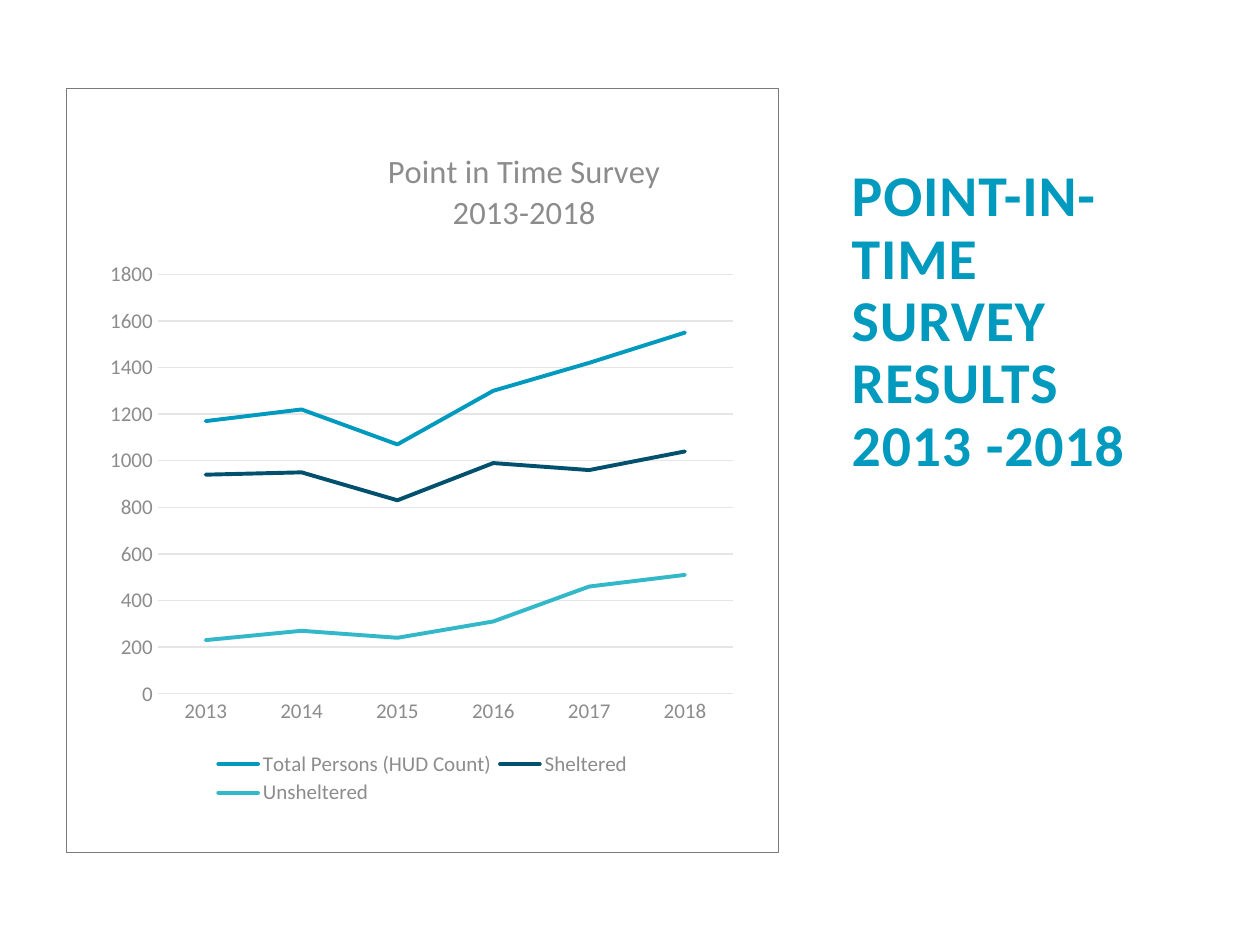
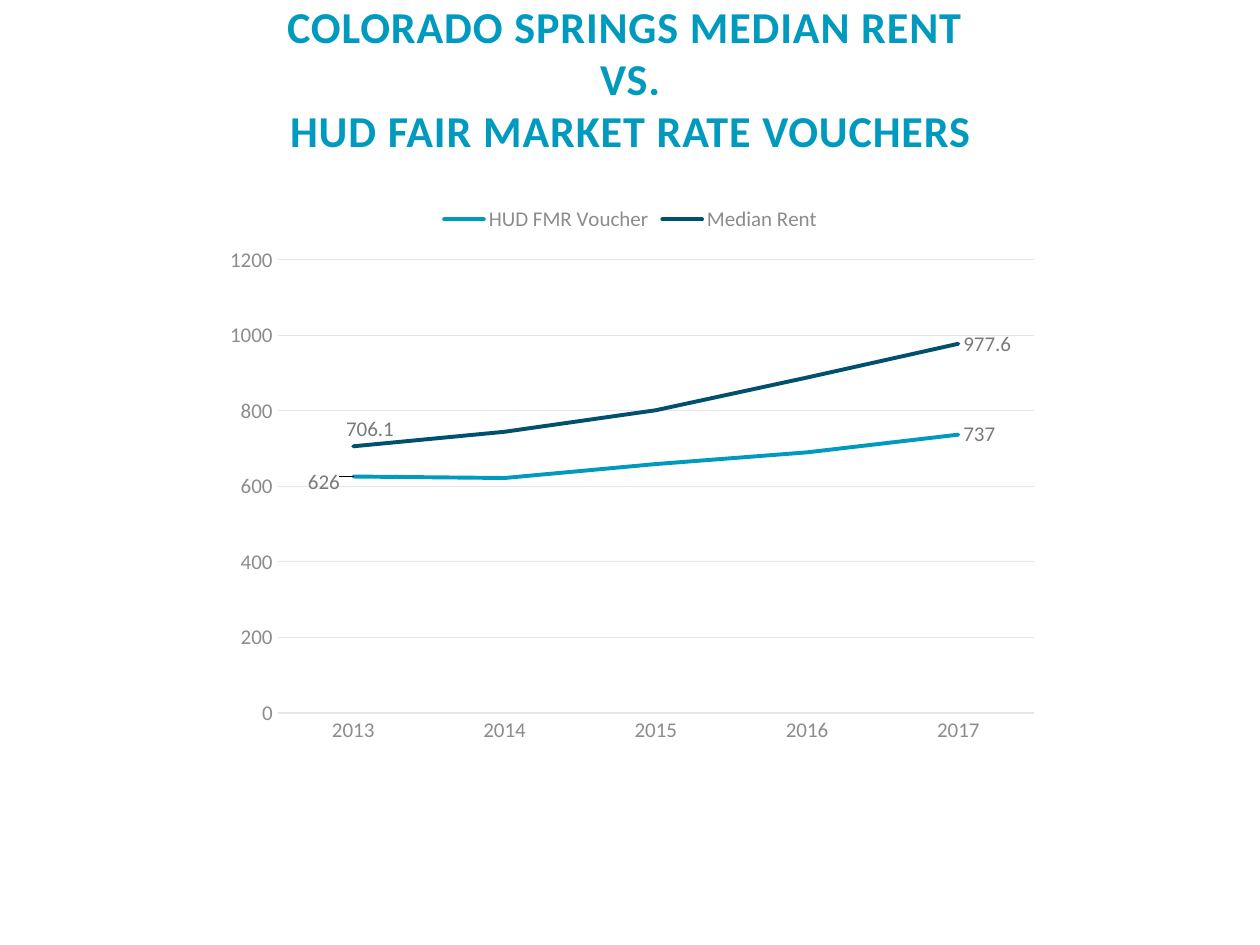
from lxml.etree import SubElement
from pptx import Presentation
from pptx.chart.data import CategoryChartData as Data
from pptx.dml.color import RGBColor as RGB
from pptx.enum.chart import XL_CHART_TYPE as Kind, XL_LABEL_POSITION as Side
from pptx.enum.chart import XL_LEGEND_POSITION as Spot, XL_TICK_MARK as Tick
from pptx.enum.shapes import MSO_SHAPE as Form
from pptx.enum.text import MSO_ANCHOR as Anchor, MSO_AUTO_SIZE as Fit, PP_ALIGN as Align
from pptx.oxml.ns import qn
from pptx.util import Inches, Pt

HUES = {"blue": "009ABF", "navy": "01506E", "teal": "32B8C8",
        "gray": "8B8C8B", "dark": "797B79", "rule": "E4E5E4"}
LINES = ("blue", "navy", "teal")
FACE = "Calibri"


class Deck:
    """Holds the style and the current slide; boxes are percent of the slide."""

    def __init__(self):
        self.prs = Presentation()
        self.prs.slide_width, self.prs.slide_height = Inches(10), Inches(7.5)

    def page(self):
        self.slide = self.prs.slides.add_slide(self.prs.slide_layouts[5])

    def box(self, share):
        wide, high = self.prs.slide_width, self.prs.slide_height
        return [int(side * part / 100)
                for side, part in zip((wide, high, wide, high), share)]

    def hue(self, name):
        return RGB.from_string(HUES[name])

    def font(self, font, size, name, bold=False):
        font.name, font.size, font.bold = FACE, Pt(size), bold
        font.color.rgb = self.hue(name)

    def rule(self, line, name, width):
        line.color.rgb, line.width = self.hue(name), Pt(width)

    def title(self, text, share, size, anchor, align, gap):
        shape = self.slide.shapes.title
        shape.left, shape.top, shape.width, shape.height = self.box(share)
        frame = shape.text_frame
        frame.text = text
        frame.word_wrap, frame.auto_size = True, Fit.NONE
        frame.vertical_anchor = anchor
        para = frame.paragraphs[0]
        para.alignment, para.line_spacing = align, gap
        self.font(para.font, size, "blue", True)
        for run in para.runs:
            run.font._element.set("spc", "50")

    def frame(self, share):
        shape = self.slide.shapes.add_shape(Form.RECTANGLE, *self.box(share))
        shape.shadow.inherit = False
        shape.fill.background()
        self.rule(shape.line, "dark", 0.5)

    def lay(self, node, index, inner=False, **spots):
        """Give a chart part a fixed place, in shares of the chart."""
        for old in node.findall(qn("c:layout")):
            node.remove(old)
        layout = node.makeelement(qn("c:layout"))
        node.insert(index, layout)
        manual = SubElement(layout, qn("c:manualLayout"))
        pairs = [("layoutTarget", "inner")] if inner else []
        if "w" in spots:
            pairs += [("xMode", "edge"), ("yMode", "edge")]
        for tag, val in pairs + list(spots.items()):
            SubElement(manual, qn("c:" + tag)).set("val", str(val))

    def chart(self, share, cats, rows, top, spot, plot):
        data = Data()
        data.categories = cats
        for name, vals in rows.items():
            data.add_series(name, vals)
        chart = self.slide.shapes.add_chart(Kind.LINE, *self.box(share), data).chart
        self.font(chart.font, 12, "gray")
        chart.has_title = False
        chart.has_legend = True
        chart.legend.position = spot
        chart.legend.include_in_layout = False
        self.font(chart.legend.font, 12, "gray")
        # Axes
        for axis in (chart.category_axis, chart.value_axis):
            axis.major_tick_mark = axis.minor_tick_mark = Tick.NONE
            self.font(axis.tick_labels.font, 12, "gray")
        self.rule(chart.category_axis.format.line, "rule", 0.75)
        axis = chart.value_axis
        axis.minimum_scale, axis.maximum_scale, axis.major_unit = 0, top, 200
        axis.format.line.fill.background()
        self.rule(axis.major_gridlines.format.line, "rule", 0.75)
        # Series
        chart.plots[0].vary_by_categories = False
        for row, name in zip(chart.plots[0].series, LINES):
            row.smooth = False
            self.rule(row.format.line, name, 2.25)
            for line in row._element.xpath("./c:spPr/a:ln"):
                line.set("cap", "rnd")
        area = chart._chartSpace.chart.plotArea
        self.lay(area, 0, True, **dict(zip("xywh", plot)))
        return chart

    def head(self, chart, lines, size, x, y):
        chart.has_title = True
        frame = chart.chart_title.text_frame
        frame.text = "\n".join(lines)
        for para in frame.paragraphs:
            para.alignment = Align.CENTER
            self.font(para.font, size, "gray")
        self.lay(chart.chart_title._element, 1, xMode="edge", yMode="edge", x=x, y=y)

    def label(self, row, index, side, shift=None):
        label = row.points[index].data_label
        self.font(label.font, 12, "dark")
        label.position = side
        if shift:
            node = row._element.xpath(f".//c:dLbl[c:idx/@val={index}]")[0]
            self.lay(node, 1, x=shift[0], y=shift[1])


def years(last):
    return [str(year) for year in range(2013, last + 1)]


def survey(deck):
    deck.page()
    deck.title("POINT-IN-TIME SURVEY RESULTS 2013 -2018", (66.6, 14, 26.5, 37.33),
               33, Anchor.BOTTOM, Align.LEFT, 0.9)
    deck.frame((5.3, 9.33, 56.5, 80.93))
    rows = {"Total Persons (HUD Count)": (1170, 1220, 1070, 1300, 1420, 1550),
            "Sheltered": (940, 950, 830, 990, 960, 1040),
            "Unsheltered": (230, 270, 240, 310, 460, 510)}
    chart = deck.chart((7.9, 14, 51.3, 71.6), years(2018), rows, 1800,
                       Spot.BOTTOM, (0.09, 0.21, 0.89, 0.62))
    deck.head(chart, ("Point in Time Survey", "2013-2018"), 18.6, 0.44, 0.02)
    deck.lay(chart.legend._element, 1, x=0.17, y=0.91, w=0.66, h=0.09)


def rent(deck):
    deck.page()
    deck.title("COLORADO SPRINGS MEDIAN RENT \vVS.\vHUD FAIR MARKET RATE VOUCHERS",
               (1.7, 2.13, 96.7, 12.67), 25.2, Anchor.MIDDLE, Align.CENTER, 0.98)
    rows = {"HUD FMR Voucher": (626, 622, 659, 690, 737),
            "Median Rent": (706.1, 744.6, 801.6, 888.2, 977.6)}
    chart = deck.chart((16.7, 20.4, 66.7, 59.2), years(2017), rows, 1200,
                       Spot.TOP, (0.08, 0.12, 0.9, 0.81))
    # Labels at both ends of each line
    voucher, median = chart.plots[0].series
    deck.label(voucher, 0, Side.LEFT, (-0.01, 0.01))
    deck.label(median, 0, Side.ABOVE, (0.02, 0))
    for row in (voucher, median):
        deck.label(row, 4, Side.RIGHT)


def main():
    deck = Deck()
    survey(deck)
    rent(deck)
    deck.prs.save("out.pptx")


if __name__ == "__main__":
    main()
